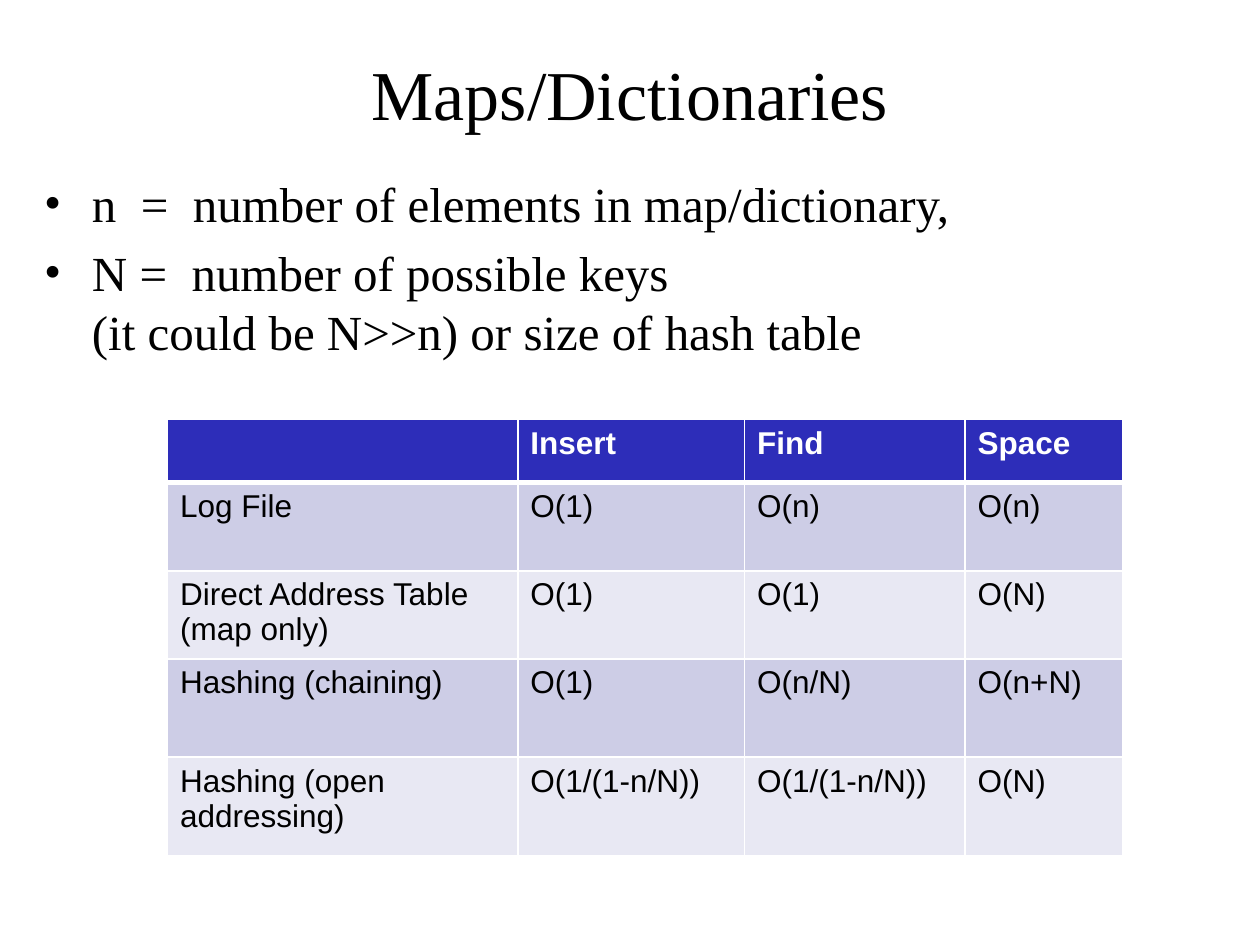
from dataclasses import dataclass

from lxml import etree
from pptx import Presentation
from pptx.dml.color import RGBColor
from pptx.enum import text
from pptx.oxml import ns
from pptx.util import Inches, Pt

BLACK = RGBColor(0x00, 0x00, 0x00)
WHITE = RGBColor(0xFF, 0xFF, 0xFF)
HEADER_BLUE = RGBColor(0x2D, 0x2D, 0xB9)
BANDS = (RGBColor(0xCD, 0xCD, 0xE6), RGBColor(0xE8, 0xE8, 0xF3))
SERIF, SANS = "Times New Roman", "Arial"
SLIDE_WIDTH, SLIDE_HEIGHT = Inches(10), Inches(7.5)


@dataclass(frozen=True)
class Box:
    """A frame given as shares of the slide's width and height."""
    left: float
    top: float
    width: float
    height: float

    def place(self, shape) -> None:
        shape.left = int(self.left * SLIDE_WIDTH)
        shape.top = int(self.top * SLIDE_HEIGHT)
        shape.width = int(self.width * SLIDE_WIDTH)
        shape.height = int(self.height * SLIDE_HEIGHT)


@dataclass(frozen=True)
class TextStyle:
    font: str
    size: float
    color: RGBColor = BLACK
    bold: bool = False


@dataclass(frozen=True)
class TableRow:
    height: float
    cells: tuple[str, ...]


TITLE_STYLE = TextStyle(SERIF, 40)
LIST_STYLE = TextStyle(SERIF, 28)
HEADER_STYLE = TextStyle(SANS, 18, WHITE, bold=True)
CELL_STYLE = TextStyle(SANS, 18)

BULLETS = (
    ("n  =  number of elements in map/dictionary,",),
    ("N =  number of possible keys ", "(it could be N>>n) or size of hash table"),
)
COLUMN_WIDTHS = (2.78, 1.8, 1.75, 1.25)
COSTS = (
    TableRow(0.5, ("", "Insert", "Find", "Space")),
    TableRow(0.7, ("Log File", "O(1)", "O(n)", "O(n)")),
    TableRow(0.7, ("Direct Address Table (map only)", "O(1)", "O(1)", "O(N)")),
    TableRow(0.78, ("Hashing (chaining)", "O(1)", "O(n/N)", "O(n+N)")),
    TableRow(0.78, ("Hashing (open addressing)", "O(1/(1-n/N))", "O(1/(1-n/N))", "O(N)")),
)


def add_run(paragraph, words: str, style: TextStyle) -> None:
    run = paragraph.add_run()
    run.text = words
    run.font.name = style.font
    run.font.size = Pt(style.size)
    run.font.bold = style.bold
    run.font.color.rgb = style.color


def set_bullet(paragraph, indent: float) -> None:
    properties = paragraph._p.get_or_add_pPr()
    properties.set("marL", str(Inches(indent)))
    properties.set("indent", str(-Inches(indent)))
    etree.SubElement(properties, ns.qn("a:buFont"), typeface=SERIF)
    etree.SubElement(properties, ns.qn("a:buChar"), char="•")


def set_borders(cell, **widths: float) -> None:
    """Draw white borders; sides come in the order L, R, T, B."""
    properties = cell._tc.get_or_add_tcPr()
    for side, width in widths.items():
        line = etree.SubElement(properties, ns.qn(f"a:ln{side}"), w=str(Pt(width)))
        fill = etree.SubElement(line, ns.qn("a:solidFill"))
        etree.SubElement(fill, ns.qn("a:srgbClr"), val=str(WHITE))


def fill_title(shape) -> None:
    Box(0.05, 0.04, 0.9, 0.116).place(shape)
    frame = shape.text_frame
    frame.vertical_anchor = text.MSO_ANCHOR.MIDDLE
    frame.auto_size = text.MSO_AUTO_SIZE.NONE
    frame.paragraphs[0].alignment = text.PP_ALIGN.CENTER
    add_run(frame.paragraphs[0], "Maps/Dictionaries", TITLE_STYLE)


def fill_list(shape) -> None:
    Box(0.025, 0.177, 0.958, 0.688).place(shape)
    frame = shape.text_frame
    frame.auto_size = text.MSO_AUTO_SIZE.NONE
    for index, lines in enumerate(BULLETS):
        paragraph = frame.add_paragraph() if index else frame.paragraphs[0]
        paragraph.space_before = Pt(0.2 * LIST_STYLE.size)
        set_bullet(paragraph, 0.38)
        for number, line in enumerate(lines):
            if number:
                paragraph.add_line_break()
            add_run(paragraph, line, LIST_STYLE)


def add_cost_table(slide) -> None:
    table = slide.shapes.add_table(
        len(COSTS), len(COLUMN_WIDTHS), Inches(1.33), Inches(3.33),
        Inches(sum(COLUMN_WIDTHS)), Inches(sum(row.height for row in COSTS)),
    ).table
    for column, width in zip(table.columns, COLUMN_WIDTHS):
        column.width = Inches(width)
    for index, row in enumerate(COSTS):
        table.rows[index].height = Inches(row.height)
        header = index == 0
        for cell, words in zip(table.rows[index].cells, row.cells):
            # A thicker rule separates the header from the first row
            set_borders(cell, L=1, R=1, T=3 if index == 1 else 1, B=3 if header else 1)
            cell.fill.solid()
            cell.fill.fore_color.rgb = HEADER_BLUE if header else BANDS[(index - 1) % 2]
            if words:
                add_run(cell.text_frame.paragraphs[0], words,
                        HEADER_STYLE if header else CELL_STYLE)


def main() -> None:
    presentation = Presentation()
    presentation.slide_width, presentation.slide_height = SLIDE_WIDTH, SLIDE_HEIGHT
    slide = presentation.slides.add_slide(presentation.slide_layouts[1])
    slide.background.fill.solid()
    slide.background.fill.fore_color.rgb = WHITE

    # Heading and definitions
    fill_title(slide.shapes.title)
    fill_list(slide.placeholders[1])

    # Cost of each operation
    add_cost_table(slide)
    presentation.save("out.pptx")


if __name__ == "__main__":
    main()
